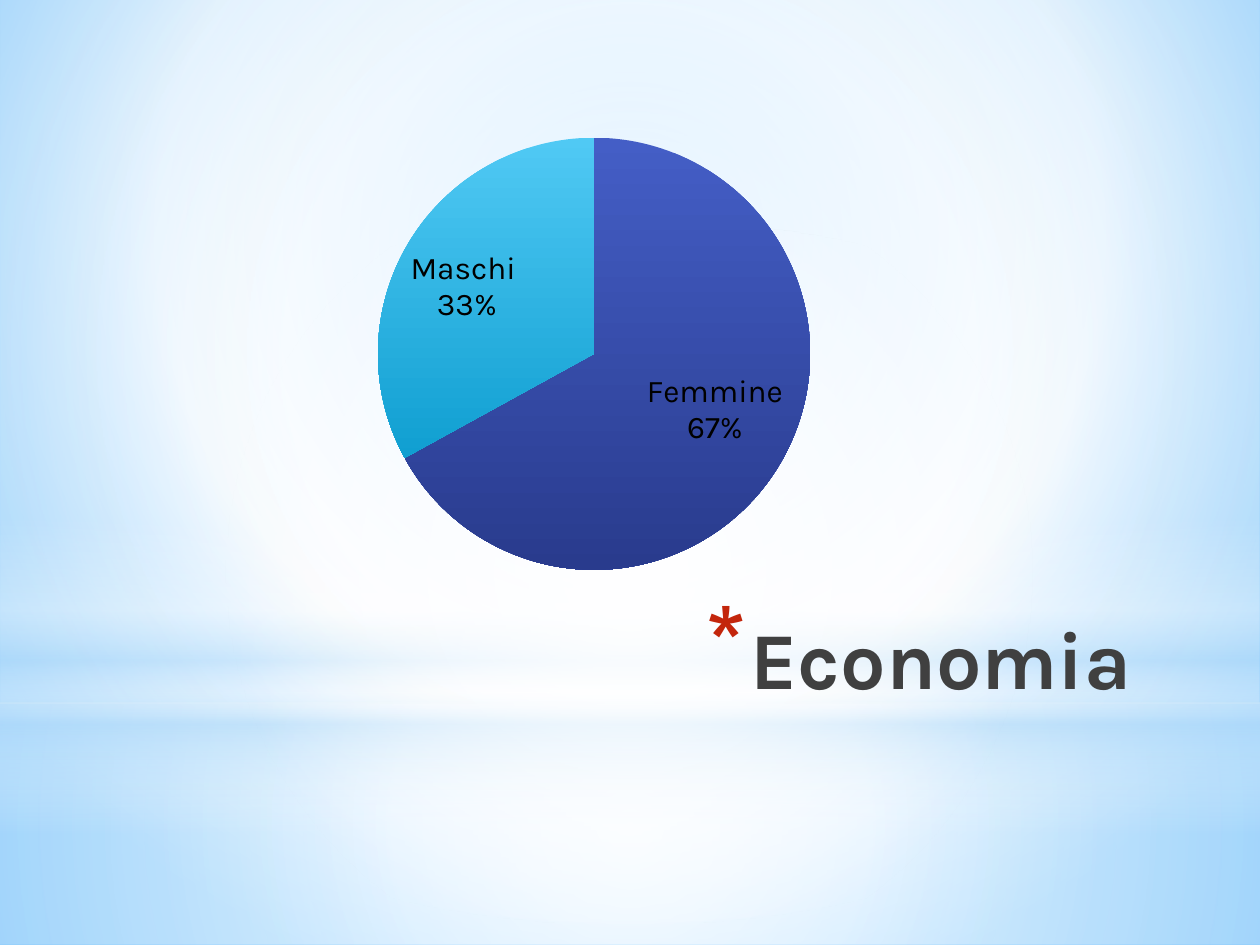
from lxml import etree
from pptx import Presentation
from pptx.chart.data import CategoryChartData
from pptx.dml.color import RGBColor
from pptx.enum.chart import XL_CHART_TYPE, XL_LABEL_POSITION
from pptx.enum.shapes import MSO_SHAPE
from pptx.enum.text import MSO_ANCHOR, PP_ALIGN
from pptx.oxml import parse_xml
from pptx.oxml.ns import nsdecls, qn
from pptx.util import Inches, Pt

FONT = "Karla"
RECTANGLE, OVAL = MSO_SHAPE.RECTANGLE, MSO_SHAPE.OVAL
PIE, BEST_FIT = XL_CHART_TYPE.PIE, XL_LABEL_POSITION.BEST_FIT
RIGHT, TOP = PP_ALIGN.RIGHT, MSO_ANCHOR.TOP
CENTRE = (50, 50, 50, 50)
WHITE, SKY = "FFFFFF", "B4DCFA"

# Light effects, back to front: preset, box, focus (None is top to bottom),
# stops of position, colour and opacity in percent
GLOWS = [
    (RECTANGLE, (0, 5.58, 10, 1.92), CENTRE,
     [(0, WHITE, 91), (37, WHITE, 76), (100, SKY, 79)]),
    (RECTANGLE, (0, 0, 10, 5.58), CENTRE,
     [(0, WHITE, 89), (48, WHITE, 62), (100, SKY, 79)]),
    (RECTANGLE, (0, 4.12, 10, 2.5), None,
     [(0, WHITE, 0), (29, WHITE, 30), (45, SKY, 40),
      (55, WHITE, 26), (65, SKY, 60), (100, WHITE, 0)]),
    (OVAL, (0, 1.75, 10, 5.58), CENTRE, [(0, WHITE, 100), (56, WHITE, 0)]),
]
# Category, percentage, top and bottom colour of the slice
SLICES = [
    ("Femmine", 67, "445EC6", "293B8D"),
    ("Maschi ", 33, "50C9F4", "109FD1"),
]


def color(hex_value):
    return RGBColor.from_string(hex_value)


def apply_gradient(fill, parent, stops, focus=None):
    """Swap the parent's fill for a gradient, circular if a focus is given."""
    fill.solid()
    stop_xml = "".join(
        f'<a:gs pos="{pos * 1000}"><a:srgbClr val="{hex_value}">'
        f'<a:alpha val="{opacity * 1000}"/></a:srgbClr></a:gs>'
        for pos, hex_value, opacity in stops)
    if focus:
        left, top, right, bottom = (edge * 1000 for edge in focus)
        direction = (f'<a:path path="circle"><a:fillToRect l="{left}" t="{top}" '
                     f'r="{right}" b="{bottom}"/></a:path>')
    else:
        direction = '<a:lin ang="5400000" scaled="0"/>'
    gradient = parse_xml(f'<a:gradFill {nsdecls("a")} rotWithShape="1">'
                         f'<a:gsLst>{stop_xml}</a:gsLst>{direction}</a:gradFill>')
    parent.replace(parent.find(qn("a:solidFill")), gradient)


def paint_background(slide):
    stops = [(0, "9ED5FF", 100), (60, WHITE, 100), (100, "5BB9FF", 100)]
    fill = slide.background.fill
    properties = slide._element.find(".//" + qn("p:bgPr"))
    apply_gradient(fill, properties, stops, (20, 10, 20, 60))


def add_glow(slide, preset, box, focus, stops):
    glow = slide.shapes.add_shape(preset, *map(Inches, box))
    glow.shadow.inherit = False
    glow.line.fill.background()
    apply_gradient(glow.fill, glow._element.spPr, stops, focus)


def format_title(slide):
    title = slide.shapes.title
    title.left, title.top = Inches(1.96), Inches(4.78)
    title.width, title.height = Inches(7.12), Inches(1.25)
    frame = title.text_frame
    frame.text = "Economia"
    frame.vertical_anchor = TOP
    paragraph = frame.paragraphs[0]
    paragraph.alignment = RIGHT
    font = paragraph.runs[0].font
    font.name, font.size, font.bold = FONT, Pt(46), True
    font.color.rgb = color("404040")
    add_bullet(paragraph)
    # Bring the title in front of the glows
    slide.shapes._spTree.append(title._element)


def add_bullet(paragraph):
    properties = paragraph._p.get_or_add_pPr()
    properties.set("marL", str(Inches(0.35)))
    properties.set("indent", str(Inches(-0.35)))
    bullet_color = etree.SubElement(properties, qn("a:buClr"))
    etree.SubElement(bullet_color, qn("a:srgbClr"), val="C3260C")
    etree.SubElement(properties, qn("a:buSzPct"), val="128000")
    etree.SubElement(properties, qn("a:buChar"), char="*")


def add_pie(slide):
    data = CategoryChartData()
    data.categories = [name for name, *_ in SLICES]
    data.add_series("Series 1", [share for _, share, *_ in SLICES])
    chart = slide.shapes.add_chart(
        PIE, Inches(1.25), Inches(0.8), Inches(7), Inches(4.32), data).chart
    chart.has_legend = chart.has_title = False
    chart.font.name, chart.font.size = FONT, Pt(18)
    chart.font.color.rgb = color("000000")

    plot = chart.plots[0]
    plot.vary_by_categories = True
    for index, (_, _, top, bottom) in enumerate(SLICES):
        point_format = plot.series[0].points[index].format
        point_format.line.fill.background()
        properties = plot.series[0]._element.findall(qn("c:dPt"))[index].spPr
        apply_gradient(point_format.fill, properties,
                       [(0, top, 100), (100, bottom, 100)])
    label_slices(plot)
    place_plot(chart, 0.25, 0.06, 0.49, 0.81)


def label_slices(plot):
    plot.has_data_labels = True
    labels = plot.data_labels
    labels.show_category_name = labels.show_percentage = True
    labels.show_value = False
    labels.number_format, labels.number_format_is_linked = "0%", False
    labels.position = BEST_FIT
    separator = parse_xml(f'<c:separator {nsdecls("c")}>\n</c:separator>')
    labels._element.find(qn("c:showBubbleSize")).addnext(separator)


def place_plot(chart, x, y, width, height):
    """Fix the inner plot area, in fractions of the chart."""
    plot_area = chart._chartSpace.find(".//" + qn("c:plotArea"))
    for old in plot_area.findall(qn("c:layout")):
        plot_area.remove(old)
    layout = etree.Element(qn("c:layout"))
    manual = etree.SubElement(layout, qn("c:manualLayout"))
    settings = [("layoutTarget", "inner"), ("xMode", "edge"), ("yMode", "edge"),
                ("x", x), ("y", y), ("w", width), ("h", height)]
    for tag, value in settings:
        etree.SubElement(manual, qn(f"c:{tag}"), val=str(value))
    plot_area.insert(0, layout)


def main():
    deck = Presentation()
    deck.slide_width, deck.slide_height = Inches(10), Inches(7.5)
    slide = deck.slides.add_slide(deck.slide_layouts[5])
    paint_background(slide)
    for glow in GLOWS:
        add_glow(slide, *glow)
    format_title(slide)
    add_pie(slide)
    deck.save("out.pptx")


if __name__ == "__main__":
    main()
